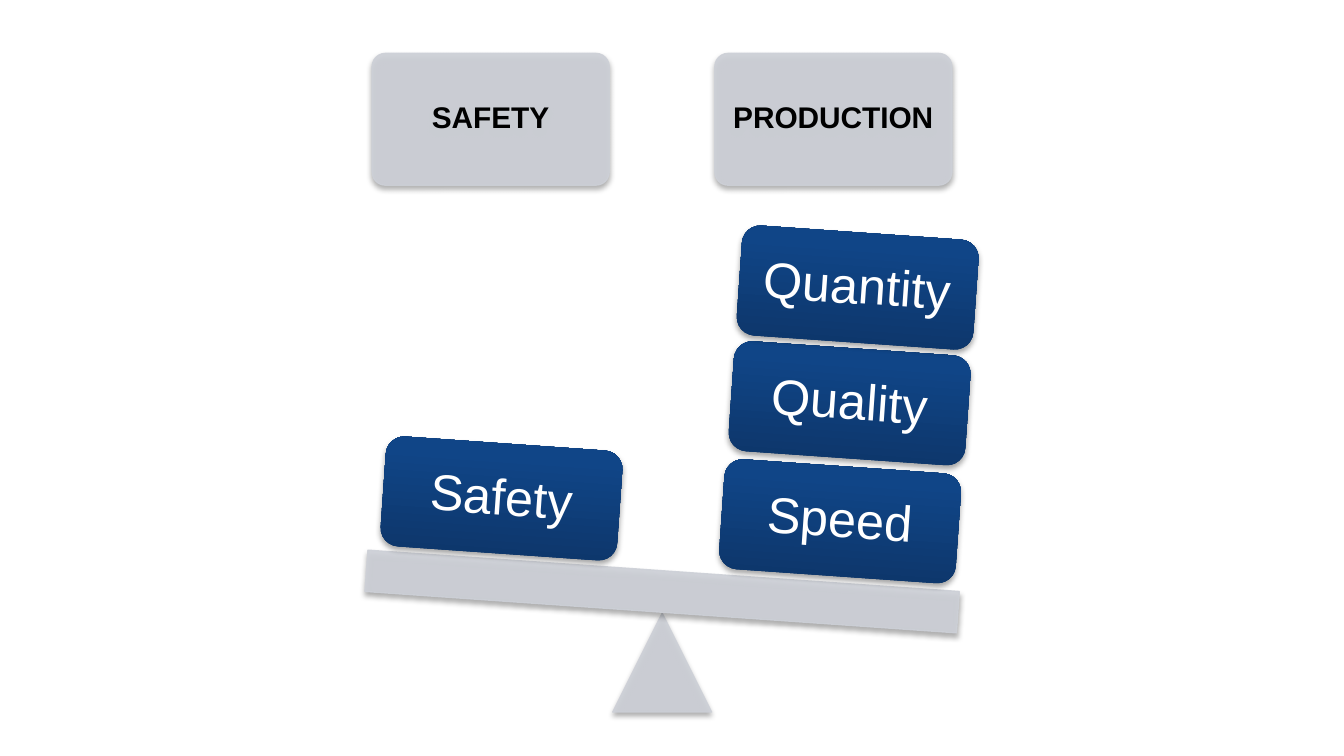
from copy import deepcopy

from lxml import etree
from pptx import Presentation
from pptx.dml.color import RGBColor
from pptx.enum import shapes, text
from pptx.oxml.ns import qn
from pptx.util import Pt

COLORS = {"grey": "CDD0D7", "black": "000000", "white": "FFFFFF"}
BLUE_STOPS = [(0, "0D3568"), (0.8, "104587"), (1, "0E458A")]
TILT = 4
HEADINGS = [("SAFETY", 199.4), ("PRODUCTION", 383)]
BLOCKS = [
    ("Speed", 386.6, 249.8),
    ("Quality", 391.7, 186.6),
    ("Quantity", 396, 124.6),
    ("Safety", 205.2, 237.6),
]


def set_alpha(color_element, percent):
    etree.SubElement(color_element, qn("a:alpha"), val=str(percent * 1000))


def add_soft_shadow(shape):
    shape.shadow.inherit = False
    effects = shape._element.spPr.find(qn("a:effectLst"))
    shadow = etree.SubElement(
        effects, qn("a:outerShdw"), blurRad=str(Pt(3.1)), dist=str(Pt(1.8)),
        dir="5400000", rotWithShape="0")
    set_alpha(etree.SubElement(shadow, qn("a:srgbClr"), val=COLORS["black"]), 35)


def add_shape(slide, kind, left, top, width, height, tilt=0):
    shape = slide.shapes.add_shape(kind, Pt(left), Pt(top), Pt(width), Pt(height))
    shape.rotation = tilt
    add_soft_shadow(shape)
    return shape


def paint_grey(shape):
    """Give the shape a slightly transparent grey fill and outline."""
    shape.fill.solid()
    shape.line.width = Pt(0.75)
    for fill in (shape.fill, shape.line.fill):
        fill.solid()
        fill.fore_color.rgb = RGBColor.from_string(COLORS["grey"])
    for color in shape._element.spPr.iterfind(".//" + qn("a:solidFill") + "/" + qn("a:srgbClr")):
        set_alpha(color, 90)


def paint_blue(shape):
    """Give the shape a blue gradient that darkens towards its foot."""
    shape.line.fill.background()
    shape.fill.gradient()
    shape.fill.gradient_angle = 90
    stop_list = shape._element.spPr.find(".//" + qn("a:gsLst"))
    stop_list.append(deepcopy(stop_list[-1]))
    for stop, (position, color) in zip(shape.fill.gradient_stops, BLUE_STOPS):
        stop.position = position
        stop.color.rgb = RGBColor.from_string(color)


def write_label(shape, label, size, color, inset, bold=False):
    frame = shape.text_frame
    frame.text = label
    frame.word_wrap = True
    frame.vertical_anchor = text.MSO_ANCHOR.MIDDLE
    frame.margin_left = frame.margin_right = Pt(inset)
    frame.margin_top = frame.margin_bottom = Pt(inset)
    para = frame.paragraphs[0]
    para.alignment = text.PP_ALIGN.CENTER
    para.line_spacing = 0.9
    font = para.runs[0].font
    font.name = "Arial"
    font.size = Pt(size)
    font.bold = bold
    font.color.rgb = RGBColor.from_string(COLORS[color])


def add_heading(slide, label, left):
    heading = add_shape(slide, shapes.MSO_SHAPE.ROUNDED_RECTANGLE, left, 28.6, 127, 70.6)
    heading.adjustments[0] = 0.1
    paint_grey(heading)
    write_label(heading, label, 16, "black", 5, bold=True)


def add_scale(slide):
    fulcrum = add_shape(slide, shapes.MSO_SHAPE.ISOSCELES_TRIANGLE, 328.3, 328.6, 52.9, 52.9)
    plank = add_shape(slide, shapes.MSO_SHAPE.RECTANGLE, 196, 305.8, 317.6, 22.2, TILT)
    paint_grey(fulcrum)
    paint_grey(plank)


def add_block(slide, label, left, top):
    block = add_shape(slide, shapes.MSO_SHAPE.ROUNDED_RECTANGLE, left, top, 127, 59, TILT)
    paint_blue(block)
    write_label(block, label, 27, "white", 8)


def main():
    deck = Presentation()
    deck.slide_width, deck.slide_height = Pt(720), Pt(405)
    slide = deck.slides.add_slide(deck.slide_layouts[6])
    for label, left in HEADINGS:
        add_heading(slide, label, left)
    add_scale(slide)
    for label, left, top in BLOCKS:
        add_block(slide, label, left, top)
    deck.save("out.pptx")


if __name__ == "__main__":
    main()
